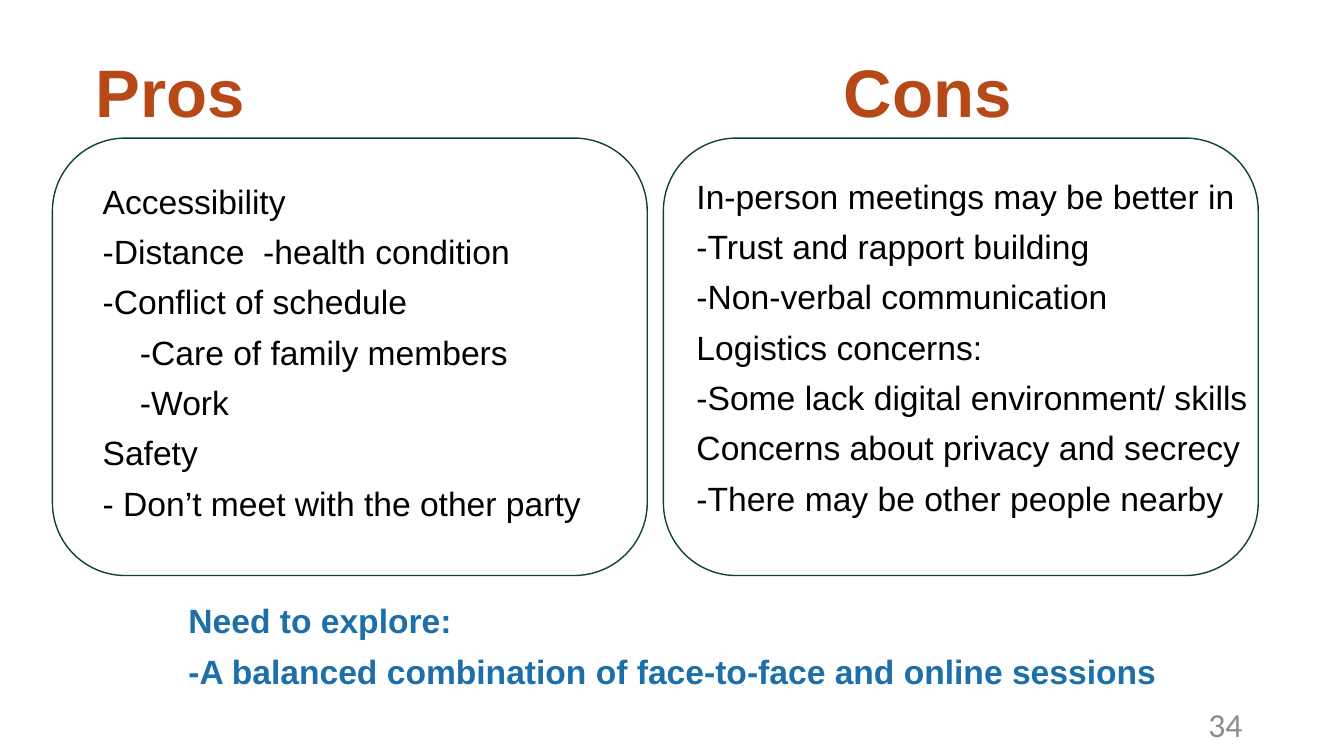
"""Build a slide weighing the pros and cons of online sessions."""
from pptx import Presentation
from pptx.dml.color import RGBColor
from pptx.enum.shapes import MSO_SHAPE
from pptx.enum.text import MSO_ANCHOR, PP_ALIGN
from pptx.util import Pt

PX = 9144
COLORS = {
    "heading": "B74919",
    "body": "000000",
    "explore": "1D6FA9",
    "number": "8C8C8C",
    "outline": "0D4335",
}
SUB_INDENT = 37

pros = [
    "Accessibility",
    "-Distance  -health condition",
    "-Conflict of schedule",
    "-Care of family members",
    "-Work",
    "Safety",
    "- Don’t meet with the other party",
]
cons = [
    "In-person meetings may be better in",
    "-Trust and rapport building",
    "-Non-verbal communication",
    "Logistics concerns:",
    "-Some lack digital environment/ skills",
    "Concerns about privacy and secrecy",
    "-There may be other people nearby",
]
explore = [
    "Need to explore:",
    "-A balanced combination of face-to-face and online sessions",
]

presentation = Presentation()
presentation.slide_width = 1333 * PX
presentation.slide_height = 750 * PX
slide = presentation.slides.add_slide(presentation.slide_layouts[6])


def add_text(box, lines, color, size=24, bold=False, font="Arial", spacing=0.9, before=10):
    text_box = slide.shapes.add_textbox(*(value * PX for value in box))
    text_frame = text_box.text_frame
    text_frame.word_wrap = True
    text_frame.text = "\n".join(lines)
    for paragraph in text_frame.paragraphs:
        paragraph.line_spacing = spacing
        paragraph.space_before = Pt(before)
        for run in paragraph.runs:
            run.font.name = font
            run.font.size = Pt(size)
            run.font.bold = bold
            run.font.color.rgb = RGBColor.from_string(COLORS[color])
    return text_frame


for heading, left, width in (("Pros", 85, 500), ("Cons", 827, 408)):
    heading_frame = add_text((left, 22, width, 145), [heading], "heading", 48, True, before=0)
    heading_frame.vertical_anchor = MSO_ANCHOR.MIDDLE

pros_frame = add_text((92, 179, 567, 476), pros, "body")
for paragraph in pros_frame.paragraphs[3:5]:
    paragraph._p.get_or_add_pPr().set("marL", str(SUB_INDENT * PX))
add_text((681, 174, 623, 476), cons, "body")

number_frame = add_text((942, 698, 300, 40), ["34"], "number", font="Calibri", spacing=1.0, before=0)
number_frame.vertical_anchor = MSO_ANCHOR.MIDDLE
number_frame.paragraphs[0].alignment = PP_ALIGN.RIGHT

add_text((177, 595, 980, 97), explore, "explore", bold=True)

for left in (52, 658):
    panel = slide.shapes.add_shape(
        MSO_SHAPE.ROUNDED_RECTANGLE, left * PX, 137 * PX, 590 * PX, 434 * PX
    )
    panel.shadow.inherit = False
    panel.fill.background()
    panel.line.color.rgb = RGBColor.from_string(COLORS["outline"])
    panel.line.width = Pt(1)

presentation.save("out.pptx")
